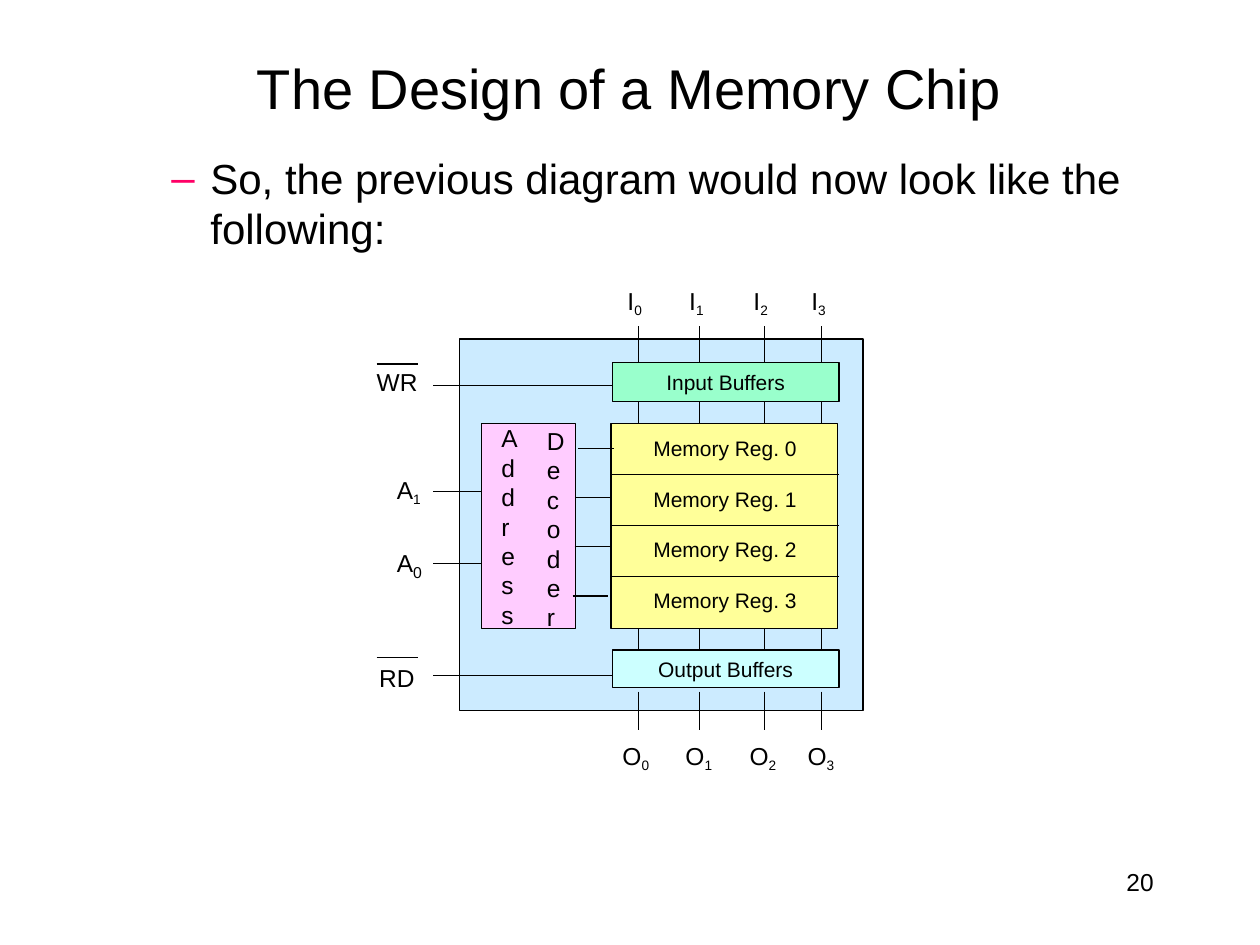
import pptx
import pptx.dml.color
import pptx.enum.shapes
import pptx.enum.text
import pptx.oxml
import pptx.oxml.ns
import pptx.util
from lxml import etree

ALIGN = pptx.enum.text.PP_ALIGN
ANCHOR = pptx.enum.text.MSO_ANCHOR
BLACK = "000000"


def color(hex_string):
    return pptx.dml.color.RGBColor.from_string(hex_string)


def add_xml(parent, tag, **attributes):
    child = etree.SubElement(parent, pptx.oxml.ns.qn(tag))
    for name, value in attributes.items():
        child.set(name, str(value))
    return child


class Diagram:
    """Draws on a grid of 100 columns by 75 rows of square cells."""
    font = "Arial"
    line_width = 0.72

    def __init__(self, prs):
        self.cell = prs.slide_width / 100
        self.s = prs.slides.add_slide(prs.slide_layouts[6])

    def grid(self, *cells):
        return [round(c * self.cell) for c in cells]

    def run(self, p, text, size, subscript=False):
        r = p.add_run()
        r.text = text
        r.font.name = self.font
        r.font.size = pptx.util.Pt(size)
        r.font.color.rgb = color(BLACK)
        if subscript:
            r.font._element.set("baseline", "-22000")

    def frame(self, sp, align, anchor=ANCHOR.TOP):
        tf = sp.text_frame
        tf.word_wrap = True
        tf.vertical_anchor = anchor
        tf.margin_left = tf.margin_right = tf.margin_top = tf.margin_bottom = 0
        tf.paragraphs[0].alignment = align
        return tf

    def text(self, x, y, w, h, text, size=14, align=ALIGN.LEFT):
        sp = self.s.shapes.add_textbox(*self.grid(x, y, w, h))
        tf = self.frame(sp, align)
        self.run(tf.paragraphs[0], text, size)
        return tf

    def signals(self, x, y, w, h, letter, indices, tabs=(), sub_size=13.5):
        """Writes subscripted names, one at each tab stop."""
        sp = self.s.shapes.add_textbox(*self.grid(x, y, w, h))
        p = self.frame(sp, ALIGN.LEFT).paragraphs[0]
        if tabs:
            tab_list = add_xml(p._p.get_or_add_pPr(), "a:tabLst")
            for pos in self.grid(*tabs):
                add_xml(tab_list, "a:tab", pos=pos, algn="l")
        for i in indices:
            self.run(p, letter, 14)
            self.run(p, f"{i}" if i == indices[-1] else f"{i}\t", sub_size, True)

    def block(self, x, y, w, h, fill, label=""):
        sp = self.s.shapes.add_shape(
            pptx.enum.shapes.MSO_SHAPE.RECTANGLE, *self.grid(x, y, w, h))
        sp.shadow.inherit = False
        sp.fill.solid()
        sp.fill.fore_color.rgb = color(fill)
        sp.line.color.rgb = color(BLACK)
        sp.line.width = pptx.util.Pt(self.line_width)
        if label:
            tf = self.frame(sp, ALIGN.CENTER, ANCHOR.MIDDLE)
            self.run(tf.paragraphs[0], label, 12)

    def wire(self, x1, y1, x2, y2):
        c = self.s.shapes.add_connector(
            pptx.enum.shapes.MSO_CONNECTOR.STRAIGHT, *self.grid(x1, y1, x2, y2))
        c.line.color.rgb = color(BLACK)
        c.line.width = pptx.util.Pt(self.line_width)
        add_xml(c._element.spPr, "a:effectLst")

    def bullet(self, x, y, w, h, mark, mark_color, text, size):
        p = self.text(x, y, w, h, text, size).paragraphs[0]
        pPr = p._p.get_or_add_pPr()
        margin, hang = self.grid(3.3, 3.1)
        pPr.set("marL", str(margin))
        pPr.set("indent", str(-hang))
        add_xml(add_xml(pPr, "a:buClr"), "a:srgbClr", val=mark_color)
        add_xml(pPr, "a:buFont", typeface=self.font)
        add_xml(pPr, "a:buChar", char=mark)

    def vertical_word(self, x, y, w, h, word):
        """Stacks letters by wrapping them in a narrow box."""
        tf = self.text(x, y, w, h, word[0])
        self.run(tf.add_paragraph(), " ".join(word[1:]), 14)


def main():
    prs = pptx.Presentation()
    prs.slide_width = pptx.util.Inches(10)
    prs.slide_height = pptx.util.Inches(7.5)
    d = Diagram(prs)

    # Heading and lead-in
    title = d.text(9.6, 4.3, 80.7, 5.4, "The Design of a Memory Chip", 32, ALIGN.CENTER)
    title.paragraphs[0].line_spacing = pptx.util.Pt(38.1)
    d.bullet(13.4, 12.1, 75.7, 8, "–", "FF0066",
             "So, the previous diagram would now look like the following:", 24)

    # Chip outline and its blocks
    d.block(36.5, 26.9, 32, 29.5, "CCEBFF")
    d.block(48.5, 33.6, 18, 16.3, "FFFF99")
    d.block(48.6, 28.8, 18, 3.1, "99FFCC", "Input Buffers")
    d.block(48.6, 51.6, 18, 3, "CCFFFF", "Output Buffers")
    d.block(38.2, 33.6, 7.5, 16.3, "FFCCFF")
    d.vertical_word(39.8, 33.6, 1.6, 16.5, "Address")
    d.vertical_word(43.4, 33.8, 1.7, 16.5, "Decoder")

    # Registers, their dividers and select lines
    for i in range(4):
        d.text(51.7, 34.6 + 4 * i, 11.7, 2.1, f"Memory Reg. {i}", 12, ALIGN.CENTER)
        select_y, left = 35.6 + 3.9 * i, 45.9 - 0.15 * i
        d.wire(left, select_y, left + 2.8, select_y)
        if i:
            divider_y = 33.6 + 4.05 * i
            d.wire(48.6, divider_y, 66.6, divider_y)

    # Data lines above, between and below the blocks
    for x in (50.7, 55.5, 60.7, 65.2):
        for top, bottom in ((25.9, 28.8), (31.9, 33.6), (49.9, 51.6), (54.9, 57.9)):
            d.wire(x, top, x, bottom)
    d.signals(49.8, 22.7, 18, 2.8, "I", range(4), (4.9, 10, 14.6))
    d.signals(49.4, 58.8, 18, 2.8, "O", range(4), (5, 10.1, 14.7))

    # Active-low control inputs with overbars
    for name, x, y, bar_y, wire_y in (("WR", 29.9, 29.1, 28.9, 30.6),
                                      ("RD", 30.1, 52.6, 52.2, 53.6)):
        d.text(x, y, 3.6, 2.5, name)
        d.wire(29.9, bar_y, 33.2, bar_y)
        d.wire(34.4, wire_y, 48.6, wire_y)

    # Address inputs
    for i, y, wire_y, sub_size in ((1, 37.7, 39, 13.5), (0, 43.3, 44.7, 15.5)):
        d.signals(31.5, y, 2.6, 2.8, "A", [i], sub_size=sub_size)
        d.wire(34.4, wire_y, 38.2, wire_y)

    # Page number
    d.text(89.4, 68.8, 2.7, 2.5, "20")

    prs.save("out.pptx")


if __name__ == "__main__":
    main()
